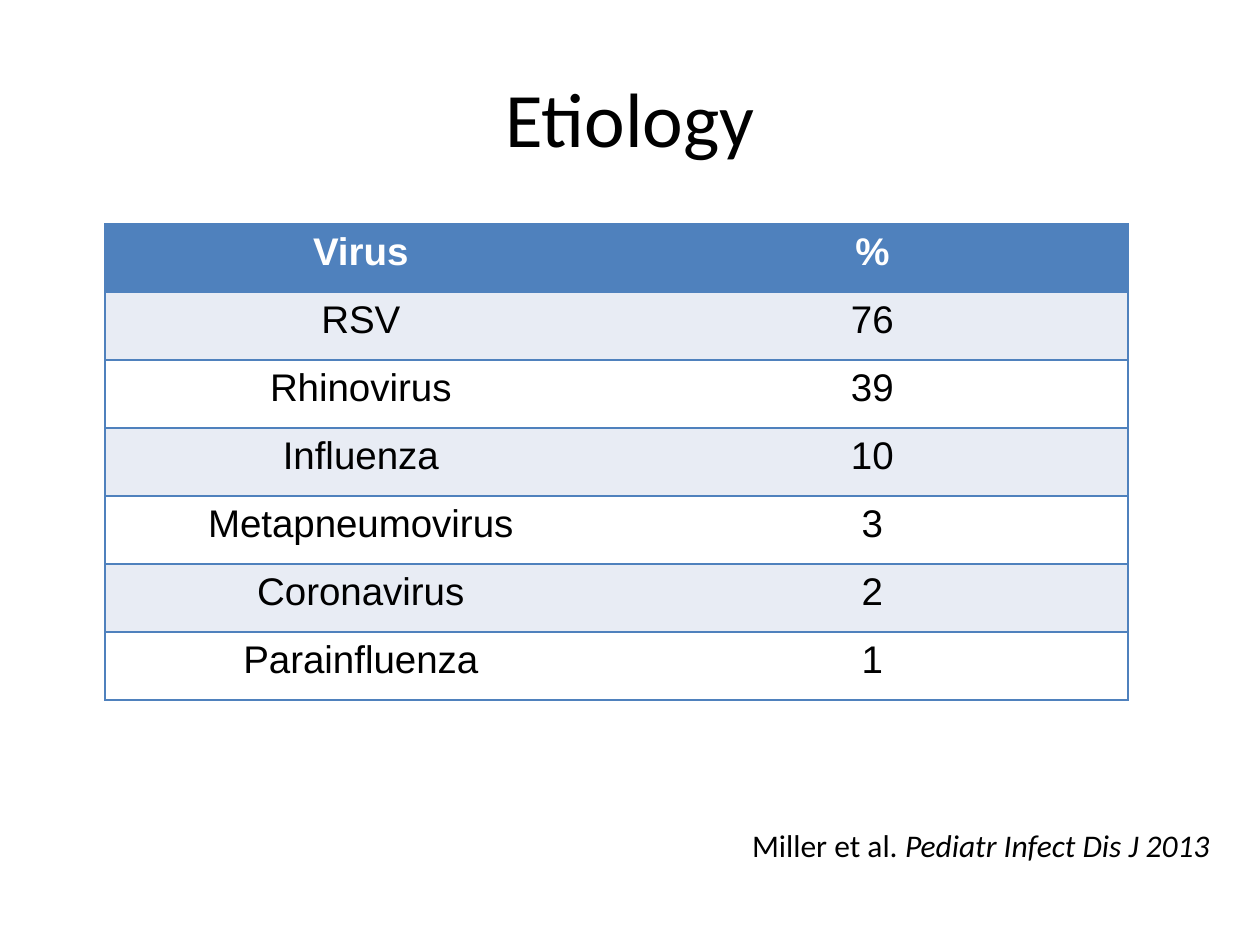
from lxml import etree
from pptx import Presentation
from pptx.dml.color import RGBColor
from pptx.enum.text import MSO_ANCHOR, PP_ALIGN
from pptx.oxml.ns import qn
from pptx.util import Inches, Pt

CENTER = PP_ALIGN.CENTER
LEFT = PP_ALIGN.LEFT
TOP = MSO_ANCHOR.TOP
MIDDLE = MSO_ANCHOR.MIDDLE

SLIDE_WIDTH = Inches(10)
SLIDE_HEIGHT = Inches(7.5)
COLUMN_WIDTH = Inches(4.06)
ROW_HEIGHT = Inches(0.54)
PLAIN_TABLE_STYLE = "{2D5ABB26-0587-4C30-8999-92F81FD0307C}"

COLORS = {
    "text": "000000",
    "header_text": "FFFFFF",
    "accent": "4F81BD",
    "band": "E8ECF4",
    "plain": "FFFFFF",
}

VIRUS_ROWS = [
    ("Virus", "%"),
    ("RSV", "76"),
    ("Rhinovirus", "39"),
    ("Influenza", "10"),
    ("Metapneumovirus", "3"),
    ("Coronavirus", "2"),
    ("Parainfluenza", "1"),
]


def color(name):
    return RGBColor.from_string(COLORS[name])


def format_run(run, font_name, size, color_name="text", bold=False, italic=False):
    font = run.font
    font.name = font_name
    font.size = Pt(size)
    font.bold = bold
    font.italic = italic
    font.color.rgb = color(color_name)


def add_text(slide, left, top, width, height, runs, size, align=LEFT, anchor=TOP):
    """Add one line of (text, italic) runs; lengths are shares of the slide."""
    box = slide.shapes.add_textbox(
        int(left * SLIDE_WIDTH), int(top * SLIDE_HEIGHT),
        int(width * SLIDE_WIDTH), int(height * SLIDE_HEIGHT))
    text_frame = box.text_frame
    text_frame.word_wrap = True
    text_frame.vertical_anchor = anchor
    paragraph = text_frame.paragraphs[0]
    paragraph.alignment = align
    for text, italic in runs:
        run = paragraph.add_run()
        run.text = text
        format_run(run, "Calibri", size, italic=italic)


def add_borders(cell, sides):
    """Draw the given sides, listed in schema order L, R, T, B, before any fill."""
    properties = cell._tc.get_or_add_tcPr()
    for side in sides:
        line = etree.SubElement(properties, qn(f"a:ln{side}"), w=str(Pt(1)))
        fill = etree.SubElement(line, qn("a:solidFill"))
        etree.SubElement(fill, qn("a:srgbClr"), val=COLORS["accent"])


def format_cell(cell, text, fill_name, sides, is_header):
    add_borders(cell, sides)
    cell.fill.solid()
    cell.fill.fore_color.rgb = color(fill_name)
    paragraph = cell.text_frame.paragraphs[0]
    paragraph.text = text
    paragraph.alignment = CENTER
    text_color = "header_text" if is_header else "text"
    format_run(paragraph.runs[0], "Arial", 22, text_color, bold=is_header)


def add_banded_table(slide, left, top, rows):
    column_count = len(rows[0])
    frame = slide.shapes.add_table(
        len(rows), column_count, int(left * SLIDE_WIDTH), int(top * SLIDE_HEIGHT),
        COLUMN_WIDTH * column_count, ROW_HEIGHT * len(rows))
    table = frame.table
    table._tbl.tblPr.find(qn("a:tableStyleId")).text = PLAIN_TABLE_STYLE
    table.horz_banding = False
    for row_index, values in enumerate(rows):
        is_header = row_index == 0
        fill_name = "accent" if is_header else ("plain", "band")[row_index % 2]
        for column_index, text in enumerate(values):
            outer_side = {0: "L", column_count - 1: "R"}.get(column_index, "")
            format_cell(table.cell(row_index, column_index), text, fill_name,
                        outer_side + "TB", is_header)


def main():
    presentation = Presentation()
    presentation.slide_width = SLIDE_WIDTH
    presentation.slide_height = SLIDE_HEIGHT
    slide = presentation.slides.add_slide(presentation.slide_layouts[6])

    add_text(slide, 0.05, 0.04, 0.9, 1 / 6, [("Etiology", False)], 44, CENTER, MIDDLE)
    add_banded_table(slide, 1 / 12, 0.237, VIRUS_ROWS)
    add_text(slide, 0.587, 0.868, 0.441, 0.053,
             [("Miller et al. ", False), ("Pediatr Infect Dis J 2013", True)], 18)

    presentation.save("out.pptx")


if __name__ == "__main__":
    main()
